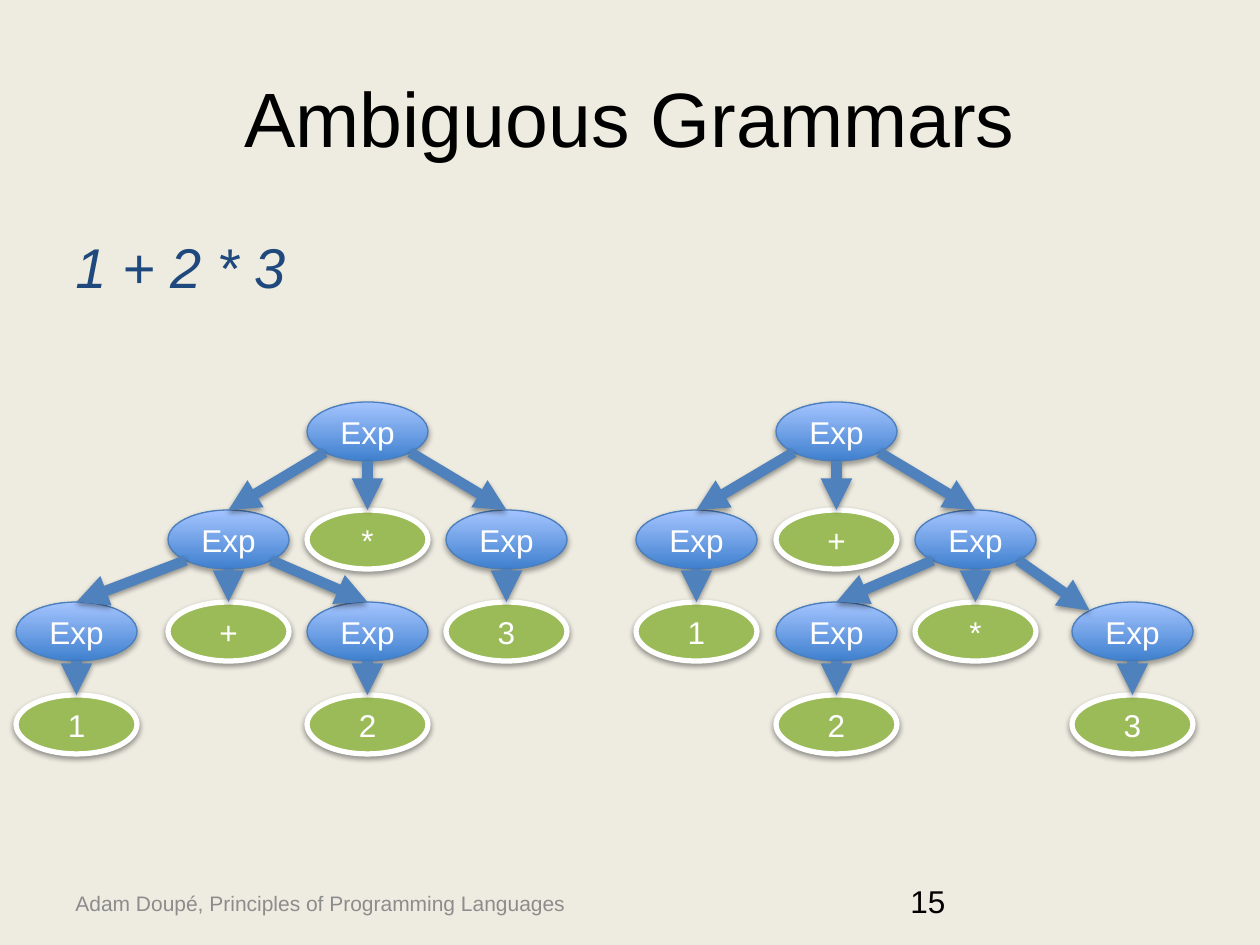
from math import sqrt

from lxml.etree import SubElement
from pptx import Presentation
from pptx.dml.color import RGBColor
from pptx.enum.shapes import MSO_CONNECTOR, MSO_SHAPE
from pptx.enum.text import MSO_ANCHOR, PP_ALIGN
from pptx.oxml.ns import qn
from pptx.util import Emu, Pt

NODE_WIDTH, NODE_HEIGHT = 121, 59
ROW_TOPS = (402, 510, 602, 695)

LEFT_TREE = ("Exp", 307, [
    ("Exp", 168, [
        ("Exp", 16, [("1", 16, [])]),
        ("+", 168, []),
        ("Exp", 307, [("2", 307, [])]),
    ]),
    ("*", 307, []),
    ("Exp", 446, [("3", 446, [])]),
])
RIGHT_TREE = ("Exp", 776, [
    ("Exp", 636, [("1", 636, [])]),
    ("+", 776, []),
    ("Exp", 915, [
        ("Exp", 776, [("2", 776, [])]),
        ("*", 915, []),
        ("Exp", 1072, [("3", 1072, [])]),
    ]),
])


def px(length):
    return Emu(round(length * 914400 / 126))


def color(value):
    return RGBColor.from_string(value)


class ParseTreeSlide:
    """Holds the style and the slide that the parse trees are drawn on."""

    font = "Arial"
    arrow = "4F81BD"
    leaf = "9BBB59"
    gradient = ("3F80CE", "A4C4FF")

    def __init__(self, deck, background):
        self.page = deck.slides.add_slide(deck.slide_layouts[6])
        fill = self.page.background.fill
        fill.solid()
        fill.fore_color.rgb = color(background)

    def label(self, frame, text, size, ink, align=PP_ALIGN.LEFT, italic=False):
        para = frame.paragraphs[0]
        para.text = text
        para.alignment = align
        para.font.name = self.font
        para.font.size = Pt(size)
        para.font.italic = italic
        para.font.color.rgb = color(ink)

    def text(self, bounds, text, size, ink, anchor=MSO_ANCHOR.TOP, **style):
        frame = self.page.shapes.add_textbox(*map(px, bounds)).text_frame
        frame.word_wrap = True
        frame.vertical_anchor = anchor
        self.label(frame, text, size, ink, **style)

    def shadow(self, shape, distance, opacity):
        properties = shape._element.spPr
        effects = properties.find(qn("a:effectLst"))
        if effects is None:
            effects = SubElement(properties, qn("a:effectLst"))
        outer = SubElement(effects, qn("a:outerShdw"), blurRad="40000",
                           dist=str(distance), dir="5400000", rotWithShape="0")
        black = SubElement(outer, qn("a:srgbClr"), val="000000")
        SubElement(black, qn("a:alpha"), val=str(opacity * 1000))

    def node(self, group, name, left, top):
        bounds = map(px, (left, top, NODE_WIDTH, NODE_HEIGHT))
        node = group.shapes.add_shape(MSO_SHAPE.OVAL, *bounds)
        node.shadow.inherit = False
        if name == "Exp":
            node.fill.gradient()
            node.fill.gradient_angle = 90
            for stop, shade in zip(node.fill.gradient_stops, self.gradient):
                stop.color.rgb = color(shade)
            outline, width, distance, opacity = "4B7EBC", 0.75, 23000, 35
        else:
            node.fill.solid()
            node.fill.fore_color.rgb = color(self.leaf)
            outline, width, distance, opacity = "FFFFFF", 3, 20000, 38
        node.line.color.rgb = color(outline)
        node.line.width = Pt(width)
        self.shadow(node, distance, opacity)
        frame = node.text_frame
        frame.margin_left = frame.margin_right = 0
        frame.margin_top = frame.margin_bottom = 0
        frame.vertical_anchor = MSO_ANCHOR.MIDDLE
        self.label(frame, name, 18, "FFFFFF", PP_ALIGN.CENTER)
        return node

    def port(self, node, across, down):
        reach = sqrt(across ** 2 + down ** 2) * 2
        return (node.left + round(node.width * (0.5 + across / reach)),
                node.top + round(node.height * (0.5 + down / reach)))

    def edge(self, group, parent, child):
        shift = child.left - parent.left
        side = (shift > 0) - (shift < 0)
        start = self.port(parent, side, 1)
        far = shift > px(NODE_WIDTH + 30)
        end = self.port(child, -1 if far else 0, -1)
        edge = group.shapes.add_connector(MSO_CONNECTOR.STRAIGHT, *start, *end)
        if not far:
            edge.end_connect(child, 0)
        edge.line.color.rgb = color(self.arrow)
        edge.line.width = Pt(6)
        SubElement(edge.line._get_or_add_ln(), qn("a:tailEnd"), type="triangle")
        self.shadow(edge, 20000, 38)

    def tree(self, root):
        group = self.page.shapes.add_group_shape()
        edges = []

        def grow(branch, depth):
            name, left, children = branch
            node = self.node(group, name, left, ROW_TOPS[depth])
            for child in children:
                edges.append((node, grow(child, depth + 1)))
            return node

        grow(root, 0)
        for parent, child in edges:
            self.edge(group, parent, child)


def main():
    deck = Presentation()
    deck.slide_width, deck.slide_height = px(1260), px(945)
    slide = ParseTreeSlide(deck, "EEECE1")
    slide.text((63, 878, 537, 50), "Adam Doupé, Principles of Programming Languages",
               12, "8C8C8C", MSO_ANCHOR.MIDDLE)
    slide.text((63, 38, 1134, 158), "Ambiguous Grammars", 44, "000000",
               MSO_ANCHOR.MIDDLE, align=PP_ALIGN.CENTER)
    slide.text((63, 226, 1134, 139), "1 + 2 * 3", 32, "1F497D", italic=True)
    slide.text((898, 876, 294, 50), "15", 18, "000000")
    slide.tree(LEFT_TREE)
    slide.tree(RIGHT_TREE)
    deck.save("out.pptx")


if __name__ == "__main__":
    main()
